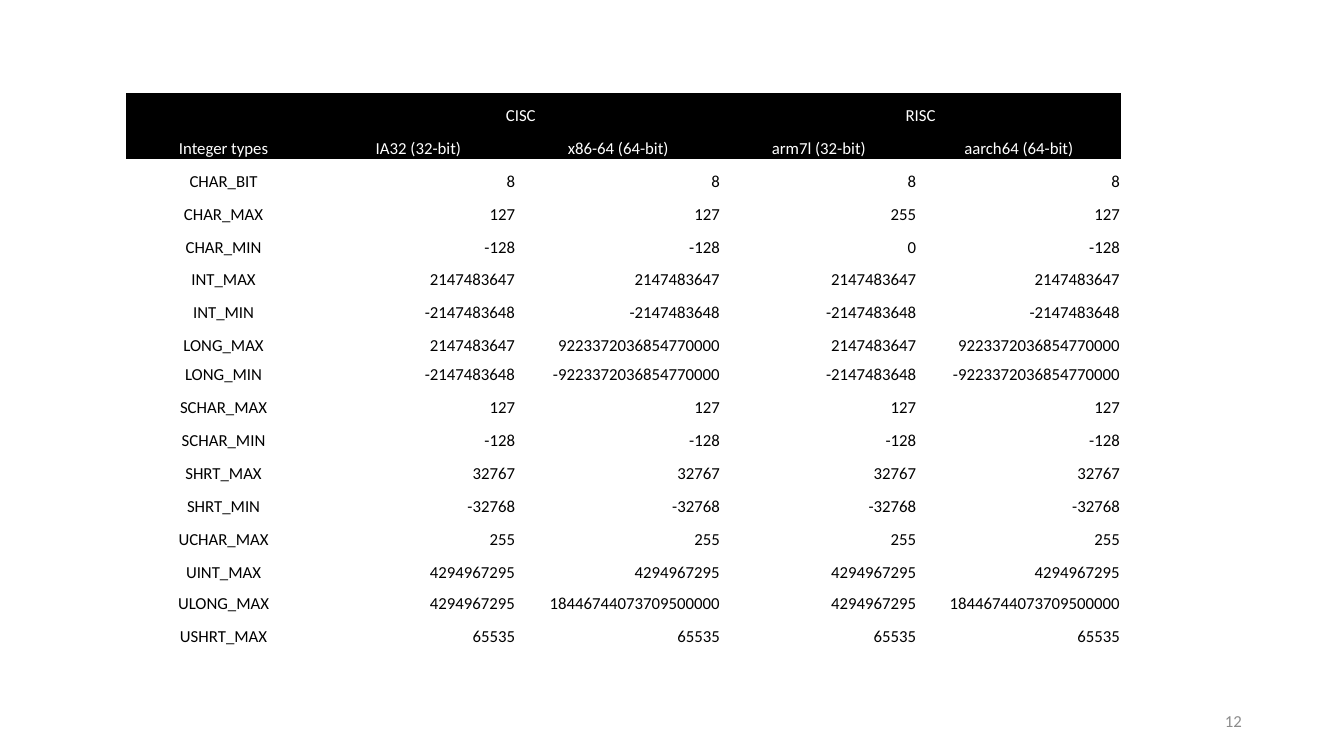
import pptx
import pptx.util
import pptx.dml.color
import pptx.enum.text
from pptx.util import Cm

# Content
FAMILIES = ["Integer types", "CISC", "", "RISC", ""]
MACHINES = ["", "IA32 (32-bit)", "x86-64 (64-bit)", "arm7l (32-bit)", "aarch64 (64-bit)"]
LIMITS = [
    ("CHAR_BIT", "8", "8", "8", "8"),
    ("CHAR_MAX", "127", "127", "255", "127"),
    ("CHAR_MIN", "-128", "-128", "0", "-128"),
    ("INT_MAX", "2147483647", "2147483647", "2147483647", "2147483647"),
    ("INT_MIN", "-2147483648", "-2147483648", "-2147483648", "-2147483648"),
    ("LONG_MAX", "2147483647", "9223372036854770000", "2147483647", "9223372036854770000"),
    ("LONG_MIN", "-2147483648", "-9223372036854770000", "-2147483648", "-9223372036854770000"),
    ("SCHAR_MAX", "127", "127", "127", "127"),
    ("SCHAR_MIN", "-128", "-128", "-128", "-128"),
    ("SHRT_MAX", "32767", "32767", "32767", "32767"),
    ("SHRT_MIN", "-32768", "-32768", "-32768", "-32768"),
    ("UCHAR_MAX", "255", "255", "255", "255"),
    ("UINT_MAX", "4294967295", "4294967295", "4294967295", "4294967295"),
    ("ULONG_MAX", "4294967295", "18446744073709500000", "4294967295", "18446744073709500000"),
    ("USHRT_MAX", "65535", "65535", "65535", "65535"),
]
PAGE_NUMBER = "12"

# Layout, in cm
COLUMN_WIDTHS = [4.91, 4.91, 5.16, 4.95, 5.13]
ROW_HEIGHT = 0.83
LOW_ROWS = {"LONG_MIN": 0.72, "ULONG_MAX": 0.79}
HEADER_ROWS = 2
NO_STYLE = "{2D5ABB26-0587-4C30-8999-92F81FD0307C}"

ALIGN = pptx.enum.text.PP_ALIGN
ANCHOR = pptx.enum.text.MSO_ANCHOR


def color(value):
    return pptx.dml.color.RGBColor.from_string(value)


def write(tf, text, align, ink):
    tf.text = text
    p = tf.paragraphs[0]
    p.alignment = align
    p.font.size = pptx.util.Pt(12)
    for r in p.runs:
        r.font.size = pptx.util.Pt(12)
        r.font.name = "Calibri"
        r.font.color.rgb = color(ink)


def add_limits_table(s):
    rows = [FAMILIES, MACHINES] + LIMITS
    heights = [LOW_ROWS.get(row[0], ROW_HEIGHT) for row in rows]
    frame = s.shapes.add_table(len(rows), len(COLUMN_WIDTHS), Cm(3.18), Cm(2.34),
                               Cm(sum(COLUMN_WIDTHS)), Cm(sum(heights)))
    table = frame.table
    table.first_row = table.horz_banding = False
    table._tbl.tblPr[0].text = NO_STYLE
    for column, width in zip(table.columns, COLUMN_WIDTHS):
        column.width = Cm(width)

    for i, row in enumerate(rows):
        table.rows[i].height = Cm(heights[i])
        header = i < HEADER_ROWS
        for j, text in enumerate(row):
            cell = table.cell(i, j)
            cell.margin_left = cell.margin_right = cell.margin_top = Cm(0.02)
            cell.margin_bottom = 0
            cell.vertical_anchor = ANCHOR.BOTTOM
            if header:
                cell.fill.solid()
                cell.fill.fore_color.rgb = color("000000")
            else:
                cell.fill.background()
            write(cell.text_frame, text,
                  ALIGN.CENTER if header or j == 0 else ALIGN.RIGHT,
                  "FFFFFF" if header else "000000")

    # Header spans
    table.cell(0, 0).merge(table.cell(1, 0))
    for j in (1, 3):
        table.cell(0, j).merge(table.cell(0, j + 1))


def add_page_number(s):
    tf = s.shapes.add_textbox(Cm(23.93), Cm(17.65), Cm(7.62), Cm(1.02)).text_frame
    tf.word_wrap = True
    tf.vertical_anchor = ANCHOR.MIDDLE
    write(tf, PAGE_NUMBER, ALIGN.RIGHT, "8C8C8C")


def main():
    prs = pptx.Presentation()
    prs.slide_width, prs.slide_height = Cm(33.87), Cm(19.05)
    s = prs.slides.add_slide(prs.slide_layouts[6])
    add_limits_table(s)
    add_page_number(s)
    prs.save("out.pptx")


if __name__ == "__main__":
    main()
